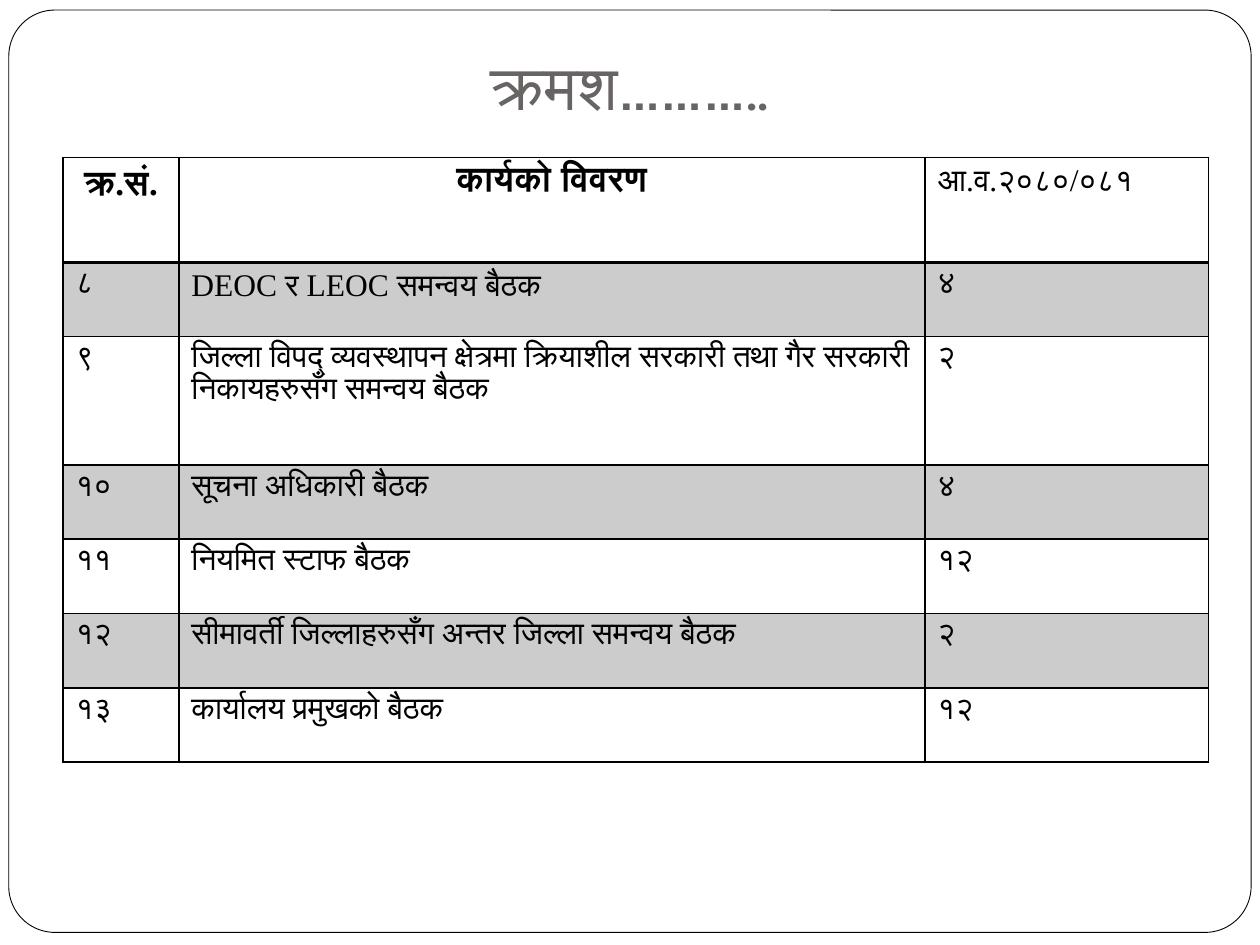
from lxml import etree
from pptx import Presentation
from pptx.dml.color import RGBColor
from pptx.enum.shapes import MSO_SHAPE
from pptx.enum.text import MSO_ANCHOR, PP_ALIGN
from pptx.oxml.ns import qn
from pptx.util import Inches, Pt

FONT = "Times New Roman"
COLS = [0.92, 5.92, 2.25]
HEADER = ["क्र.सं.", "कार्यको विवरण", "आ.व.२०८०/०८१"]
MEETINGS = [
    ("८", "DEOC र LEOC समन्वय बैठक", "४", 0.59),
    ("९", "जिल्ला विपद् व्यवस्थापन क्षेत्रमा क्रियाशील सरकारी तथा गैर सरकारी "
          "निकायहरुसँग समन्वय बैठक", "२", 1.02),
    ("१०", "सूचना अधिकारी बैठक", "४", 0.59),
    ("११", "नियमित स्टाफ बैठक", "१२", 0.59),
    ("१२", "सीमावर्ती जिल्लाहरुसँग अन्तर जिल्ला समन्वय बैठक", "२", 0.59),
    ("१३", "कार्यालय प्रमुखको बैठक", "१२", 0.59),
]


def rgb(value):
    return RGBColor.from_string(value)


def add_run(p, text, size, color, font, bold=False):
    r = p.add_run()
    r.text = text
    r.font.size, r.font.bold, r.font.name = Pt(size), bold, font
    r.font.color.rgb = rgb(color)


def add_frame(slide, x, y, w, h):
    s = slide.shapes.add_shape(MSO_SHAPE.ROUNDED_RECTANGLE,
                               Inches(x), Inches(y), Inches(w), Inches(h))
    s.adjustments[0] = 0.05
    s.shadow.inherit = False
    s.fill.solid()
    s.fill.fore_color.rgb = rgb("FFFFFF")
    s.line.color.rgb = rgb("000000")
    s.line.width = Pt(0.5)


def place_title(slide, x, y, w, h):
    s = slide.shapes.title
    s.left, s.top, s.width, s.height = Inches(x), Inches(y), Inches(w), Inches(h)
    tf = s.text_frame
    tf.vertical_anchor = MSO_ANCHOR.BOTTOM
    tf.margin_bottom = Inches(0.1)
    p = tf.paragraphs[0]
    p.alignment = PP_ALIGN.CENTER
    add_run(p, "क्रमश………..", 36, "696464", "Karla")
    # Bring the title in front of the frame
    slide.shapes._spTree.append(s._element)


def set_borders(cell, bottom):
    tc_pr = cell._tc.get_or_add_tcPr()
    widths = {"a:lnL": 1, "a:lnR": 1, "a:lnT": 1, "a:lnB": bottom}
    for i, (tag, width) in enumerate(widths.items()):
        ln = etree.Element(qn(tag), w=str(Pt(width)))
        fill = etree.SubElement(ln, qn("a:solidFill"))
        etree.SubElement(fill, qn("a:srgbClr"), val="000000")
        tc_pr.insert(i, ln)


def fill_cell(cell, shaded):
    if not shaded:
        cell.fill.background()
        return
    cell.fill.solid()
    cell.fill.fore_color.rgb = rgb("000000")
    color = cell._tc.tcPr.find(".//" + qn("a:srgbClr"))
    etree.SubElement(color, qn("a:alpha"), val="20000")


def add_meeting_table(slide, x, y, w, h):
    rows = [(*HEADER, 0.83), *MEETINGS]
    table = slide.shapes.add_table(len(rows), len(COLS), Inches(x), Inches(y),
                                   Inches(w), Inches(h)).table
    for col, width in zip(table.columns, COLS):
        col.width = Inches(width)
    for i, (*texts, height) in enumerate(rows):
        table.rows[i].height = Inches(height)
        for j, text in enumerate(texts):
            cell = table.cell(i, j)
            heading = i == 0 and j < 2
            p = cell.text_frame.paragraphs[0]
            p.alignment = PP_ALIGN.CENTER if heading else PP_ALIGN.LEFT
            add_run(p, text, 20 if heading else 18, "000000", FONT, heading)
            fill_cell(cell, i % 2 == 1)
            set_borders(cell, 2 if i == 0 else 1)


def main():
    prs = Presentation()
    prs.slide_width, prs.slide_height = Inches(10), Inches(7.5)
    slide = prs.slides.add_slide(prs.slide_layouts[5])
    add_frame(slide, 0.07, 0.08, 9.86, 7.32)
    place_title(slide, 0.5, 0.3, 9, 0.78)
    add_meeting_table(slide, 0.5, 1.25, 9.08, 4.8)
    prs.save("out.pptx")


if __name__ == "__main__":
    main()
